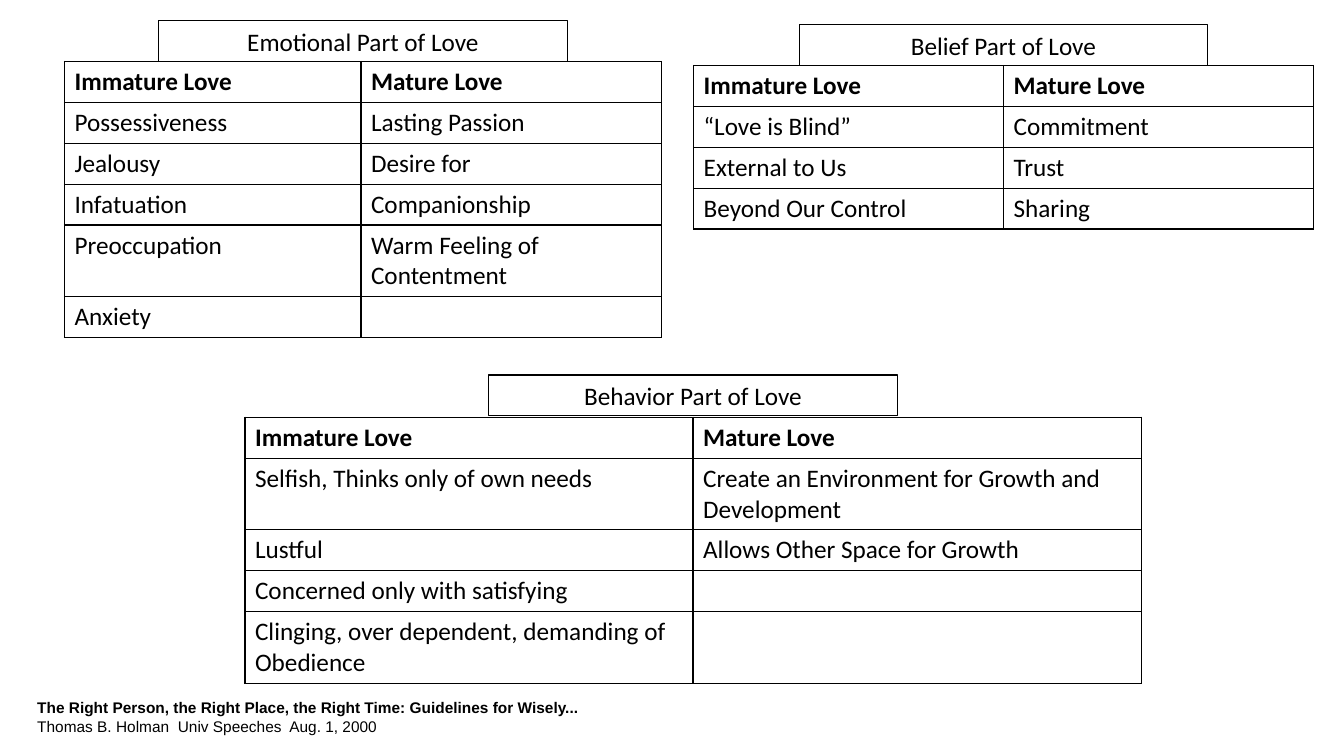
from pptx import Presentation
from pptx.dml.color import RGBColor
from pptx.enum.shapes import MSO_SHAPE
from pptx.enum.text import MSO_ANCHOR, PP_ALIGN
from pptx.oxml import parse_xml
from pptx.oxml.ns import nsdecls
from pptx.util import Inches, Pt

RECTANGLE = MSO_SHAPE.RECTANGLE
CENTER = PP_ALIGN.CENTER
MIDDLE = MSO_ANCHOR.MIDDLE

COLORS = {"ink": "000000", "paper": "FFFFFF"}
HEADER = ("Immature Love", "Mature Love")

# Lengths are percentages of the slide's width or height
ROW_HEIGHT = 5.4
HEADING_WIDTH = 30.38

EMOTIONAL = [
    ("Possessiveness", "Lasting Passion"),
    ("Jealousy", "Desire for"),
    ("Infatuation", "Companionship"),
    ("Preoccupation", "Warm Feeling of Contentment"),
    ("Anxiety", ""),
]
BELIEF = [
    ("“Love is Blind”", "Commitment"),
    ("External to Us", "Trust"),
    ("Beyond Our Control", "Sharing"),
]
BEHAVIOR = [
    ("Selfish, Thinks only of own needs",
     "Create an Environment for Growth and Development"),
    ("Lustful", "Allows Other Space for Growth"),
    ("Concerned only with satisfying", ""),
    ("Clinging, over dependent, demanding of Obedience", ""),
]


class LoveSlide:
    """Holds the style and the current slide."""

    def __init__(self, deck):
        self.width, self.height = deck.slide_width, deck.slide_height
        self.slide = deck.slides.add_slide(deck.slide_layouts[6])

    def x(self, share):
        return round(self.width * share / 100)

    def y(self, share):
        return round(self.height * share / 100)

    def color(self, name):
        return RGBColor.from_string(COLORS[name])

    def set_text(self, paragraph, text, size=18, font="Calibri", bold=False):
        paragraph.text = text
        paragraph.font.size = Pt(size)
        paragraph.font.name = font
        paragraph.font.bold = bold
        paragraph.font.color.rgb = self.color("ink")

    def outline_cell(self, cell):
        properties = cell._tc.get_or_add_tcPr()
        for position, side in enumerate(("lnL", "lnR", "lnT", "lnB")):
            properties.insert(position, parse_xml(
                f'<a:{side} {nsdecls("a")} w="{Pt(1)}"><a:solidFill>'
                f'<a:srgbClr val="{COLORS["ink"]}"/></a:solidFill></a:{side}>'))

    def heading(self, text, left, top):
        box = self.slide.shapes.add_shape(
            RECTANGLE, self.x(left), self.y(top),
            self.x(HEADING_WIDTH), self.y(ROW_HEIGHT))
        box.shadow.inherit = False
        box.fill.background()
        box.line.color.rgb = self.color("ink")
        box.line.width = Pt(0.75)
        box.text_frame.word_wrap = True
        box.text_frame.vertical_anchor = MIDDLE
        title = box.text_frame.paragraphs[0]
        title.alignment = CENTER
        self.set_text(title, text)

    def comparison(self, left, top, columns, pairs):
        rows = [HEADER, *pairs]
        table = self.slide.shapes.add_table(
            len(rows), len(columns), self.x(left), self.y(top),
            self.x(sum(columns)), self.y(ROW_HEIGHT * len(rows))).table
        for column, share in zip(table.columns, columns):
            column.width = self.x(share)
        for r, row in enumerate(rows):
            table.rows[r].height = self.y(ROW_HEIGHT)
            for c, text in enumerate(row):
                cell = table.cell(r, c)
                cell.fill.solid()
                cell.fill.fore_color.rgb = self.color("paper")
                self.outline_cell(cell)
                self.set_text(cell.text_frame.paragraphs[0], text, bold=r == 0)

    def part_of_love(self, text, left, top, columns, pairs, gap=0):
        self.comparison(left, top, columns, pairs)
        self.heading(text, left + (sum(columns) - HEADING_WIDTH) / 2,
                     top - ROW_HEIGHT - gap)

    def citation(self, left, top, width, height, title, details):
        frame = self.slide.shapes.add_textbox(
            self.x(left), self.y(top), self.x(width), self.y(height)).text_frame
        frame.word_wrap = True
        self.set_text(frame.paragraphs[0], title, 11, "Arial", bold=True)
        self.set_text(frame.add_paragraph(), details, 11, "Arial")


def main():
    deck = Presentation()
    deck.slide_width, deck.slide_height = Inches(13.33), Inches(7.5)
    love = LoveSlide(deck)

    # The three parts of love
    love.part_of_love("Emotional Part of Love", 4.8, 8.13, (22.06, 22.36), EMOTIONAL)
    love.part_of_love("Belief Part of Love", 51.61, 8.67, (23.06, 23.06), BELIEF)
    love.part_of_love("Behavior Part of Love", 18.23, 55.2, (33.34, 33.34), BEHAVIOR,
                      gap=0.2)

    # Source of the comparison
    love.citation(2.03, 91.73, 50, 6.27,
                  "The Right Person, the Right Place, the Right Time: "
                  "Guidelines for Wisely...",
                  "Thomas B. Holman  Univ Speeches  Aug. 1, 2000")

    deck.save("out.pptx")


if __name__ == "__main__":
    main()
